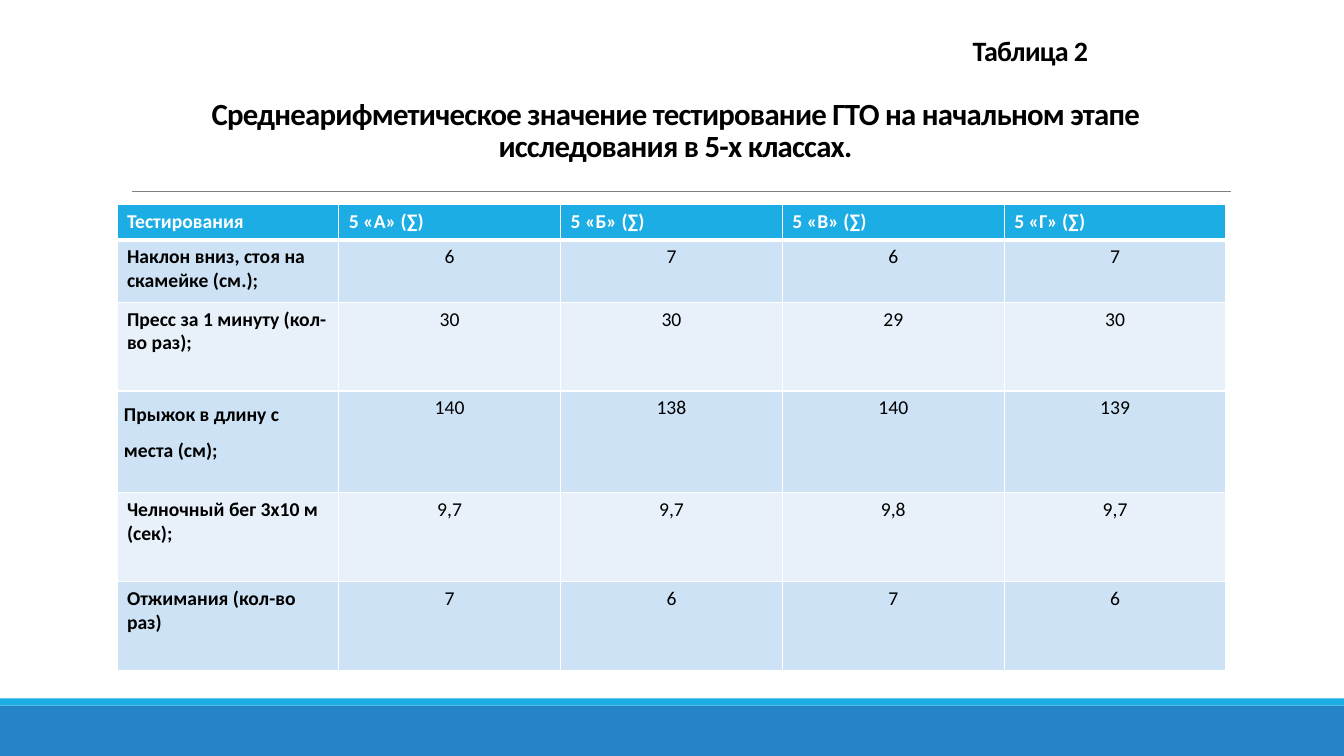
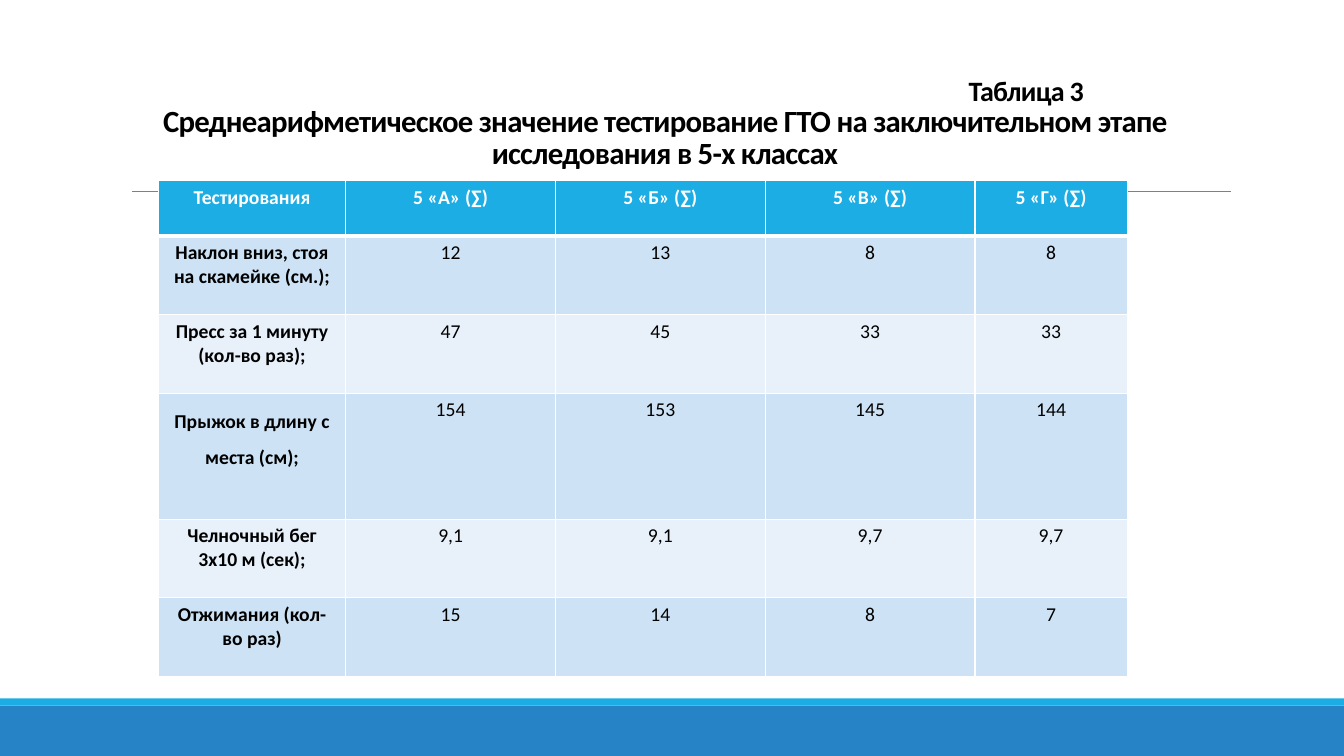
"""Build two slides comparing average fitness test results of the fifth-grade classes."""
from dataclasses import dataclass

from lxml.etree import SubElement
from pptx import Presentation
from pptx.dml.color import RGBColor
from pptx.enum.shapes import MSO_CONNECTOR as Connector, MSO_SHAPE as Shape
from pptx.enum.text import MSO_ANCHOR as Anchor, PP_ALIGN as Align
from pptx.oxml.ns import qn
from pptx.util import Inches, Pt


@dataclass(frozen=True)
class Theme:
    font: str = "Calibri"
    band: str = "2683C6"
    accent: str = "1CADE4"
    rule: str = "808080"
    ink: str = "000000"
    white: str = "FFFFFF"
    stripes: tuple = ("CDE3F5", "E8F1FA")
    label_size: int = 20
    heading_size: int = 22
    cell_size: int = 14
    heading_spacing: float = 0.85
    tracking: str = "-50"


THEME = Theme()
WIDTH, HEIGHT = 13.33, 7.5
BANDS = [(7, 0.5, THEME.band), (6.93, 0.07, THEME.accent)]
HEADER = ["Тестирования", "5 «А» (∑)", "5 «Б» (∑)", "5 «В» (∑)", "5 «Г» (∑)"]
TESTS = [
    "Наклон вниз, стоя на скамейке (см.);",
    "Пресс за 1 минуту (кол-во раз);",
    "Прыжок в длину с места (см);",
    "Челночный бег 3х10 м (сек);",
    "Отжимания (кол-во раз)",
]
JUMP_ROW = 3

SLIDES = [
    {
        "label": "Таблица 2",
        "label_area": (8.79, 0.3, 2, 0.4),
        "heading": "Среднеарифметическое значение тестирование ГТО на начальном этапе "
                   "исследования в 5-х классах.",
        "heading_area": (1.2, 0.77, 11, 0.9),
        "table_at": (1.16, 2.03),
        "columns": [2.2] * 5,
        "rows": [0.35, 0.62, 0.88, 1.01, 0.88, 0.88],
        "name_align": Align.LEFT,
        "jump_margins": (0.07, 0),
        "results": [
            ("6", "7", "6", "7"),
            ("30", "30", "29", "30"),
            ("140", "138", "140", "139"),
            ("9,7", "9,7", "9,8", "9,7"),
            ("7", "6", "7", "6"),
        ],
    },
    {
        "label": "Таблица 3",
        "label_area": (8.75, 0.7, 2, 0.4),
        "heading": "Среднеарифметическое значение тестирование ГТО на заключительном этапе "
                   "исследования в 5-х классах",
        "heading_area": (0.99, 0.84, 11.21, 0.9),
        "table_at": (1.57, 1.79),
        "columns": [1.86, 2.08, 2.08, 2.08, 1.51],
        "rows": [0.55, 0.78, 0.78, 1.25, 0.78, 0.78],
        "name_align": Align.CENTER,
        "jump_margins": (0.1, 0.05),
        "results": [
            ("12", "13", "8", "8"),
            ("47", "45", "33", "33"),
            ("154", "153", "145", "144"),
            ("9,1", "9,1", "9,7", "9,7"),
            ("15", "14", "8", "7"),
        ],
    },
]


def inches(values):
    return [Inches(value) for value in values]


def write(frame, text, size, color, align, bold=True, spacing=None):
    para = frame.paragraphs[0]
    para.alignment = align
    para.line_spacing = spacing
    span = para.add_run()
    span.text = text
    font = span.font
    font.name, font.size, font.bold = THEME.font, Pt(size), bold
    font.color.rgb = RGBColor.from_string(color)
    return span


def add_title(page, text, area, size, align, anchor, margin, spacing=None):
    frame = page.shapes.add_textbox(*inches(area)).text_frame
    frame.word_wrap = True
    frame.vertical_anchor = anchor
    frame.margin_left = frame.margin_right = Inches(margin)
    span = write(frame, text, size, THEME.ink, align, spacing=spacing)
    span._r.get_or_add_rPr().set("spc", THEME.tracking)


def add_frame(page):
    for top, height, color in BANDS:
        band = page.shapes.add_shape(Shape.RECTANGLE, *inches((0, top, WIDTH, height)))
        band.shadow.inherit = False
        band.fill.solid()
        band.fill.fore_color.rgb = RGBColor.from_string(color)
        band.line.fill.background()
    rule = page.shapes.add_connector(Connector.STRAIGHT, *inches((1.31, 1.9, 12.21, 1.9)))
    rule.line.width = Pt(0.5)
    rule.line.color.rgb = RGBColor.from_string(THEME.rule)
    SubElement(rule._element.spPr, qn("a:effectLst"))


def style_cell(cell, row):
    properties = cell._tc.get_or_add_tcPr()
    thick_side = {0: "lnB", 1: "lnT"}.get(row)
    for side in ("lnL", "lnR", "lnT", "lnB"):
        points = 3 if side == thick_side else 1
        border = SubElement(properties, qn(f"a:{side}"), w=str(Pt(points)))
        fill = SubElement(border, qn("a:solidFill"))
        SubElement(fill, qn("a:srgbClr"), val=THEME.white)
    color = THEME.stripes[(row - 1) % 2] if row else THEME.accent
    cell.fill.solid()
    cell.fill.fore_color.rgb = RGBColor.from_string(color)


def add_results(page, content):
    columns, rows = content["columns"], content["rows"]
    area = (*content["table_at"], sum(columns), sum(rows))
    table = page.shapes.add_table(len(rows), len(columns), *inches(area)).table
    for column, width in zip(table.columns, columns):
        column.width = Inches(width)
    for row, height in zip(table.rows, rows):
        row.height = Inches(height)
    lines = [HEADER] + [(test, *values) for test, values in zip(TESTS, content["results"])]
    for row, line in enumerate(lines):
        for column, text in enumerate(line):
            cell = table.cell(row, column)
            style_cell(cell, row)
            is_name = row == 0 or column == 0
            is_jump = (row, column) == (JUMP_ROW, 0)
            if is_jump:
                side, edge = inches(content["jump_margins"])
                cell.margin_left = side
                cell.margin_top = cell.margin_bottom = edge
            write(cell.text_frame, text, THEME.cell_size,
                  THEME.ink if row else THEME.white,
                  content["name_align"] if is_name else Align.CENTER,
                  bold=is_name, spacing=1.5 if is_jump else None)


def main():
    deck = Presentation()
    deck.slide_width, deck.slide_height = inches((WIDTH, HEIGHT))
    for content in SLIDES:
        page = deck.slides.add_slide(deck.slide_layouts[6])
        add_frame(page)
        add_title(page, content["label"], content["label_area"], THEME.label_size,
                  Align.RIGHT, Anchor.MIDDLE, 0)
        add_title(page, content["heading"], content["heading_area"], THEME.heading_size,
                  Align.CENTER, Anchor.BOTTOM, 0.1, THEME.heading_spacing)
        add_results(page, content)
    deck.save("out.pptx")


if __name__ == "__main__":
    main()
